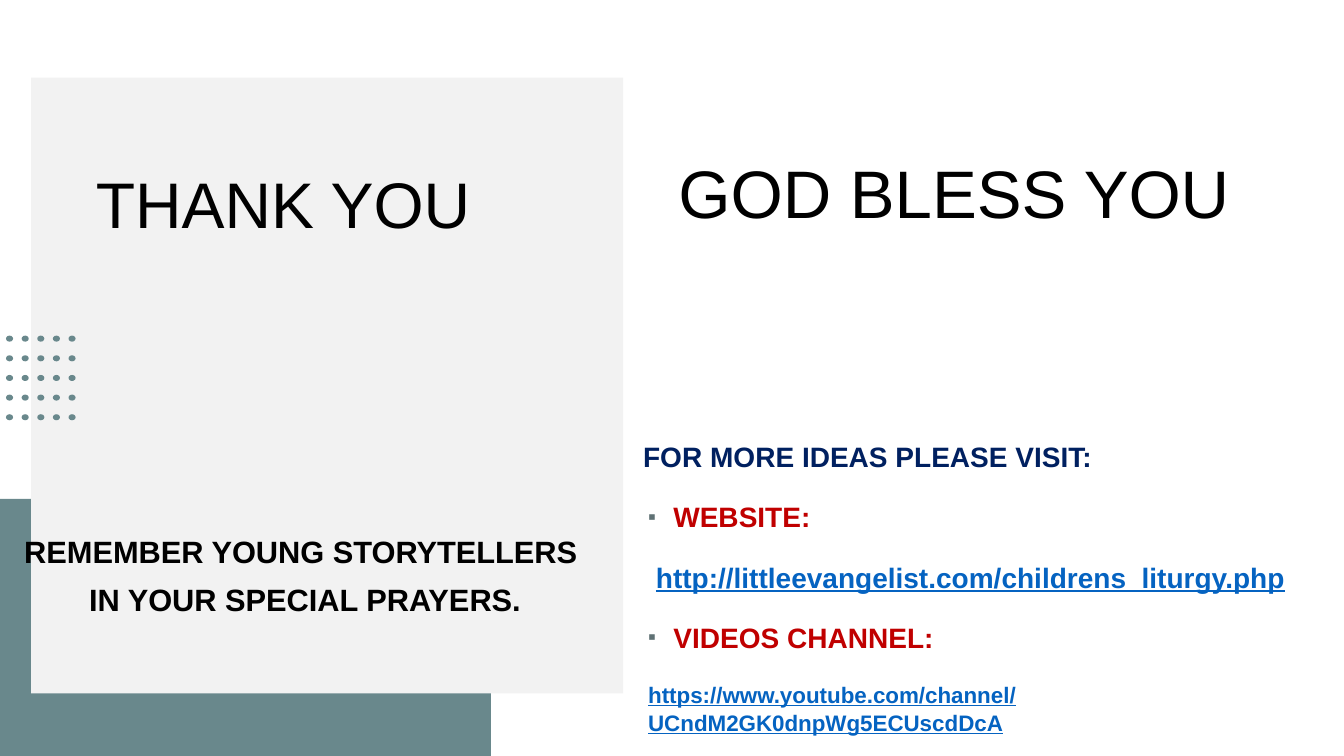
from dataclasses import dataclass
from itertools import product

from lxml.etree import SubElement
from pptx import Presentation
from pptx.dml.color import RGBColor
from pptx.enum.shapes import MSO_SHAPE as Preset
from pptx.enum.text import MSO_ANCHOR as Anchor, PP_ALIGN as Align
from pptx.oxml.ns import qn
from pptx.util import Inches, Pt

COLORS = {
    "teal": "69888C", "panel": "F2F2F2", "black": "000000", "navy": "002060",
    "red": "C00000", "link": "0563C1", "bullet": "5F7174",
}
FONT = "Arial"
DOTS_PER_SIDE = 5


@dataclass(frozen=True)
class Box:
    left: float
    top: float
    width: float
    height: float

    def lengths(self) -> tuple:
        return tuple(Inches(v) for v in (self.left, self.top, self.width, self.height))


@dataclass(frozen=True)
class Line:
    text: str
    color: str = "black"
    size: float = 20
    bold: bool = True
    underline: bool = False
    bullet: bool = False
    indent: float = 0
    lead: str = ""


def color(name: str) -> RGBColor:
    return RGBColor.from_string(COLORS[name])


def add_filled(shapes, preset, box: Box, fill: str):
    shape = shapes.add_shape(preset, *box.lengths())
    shape.shadow.inherit = False
    shape.fill.solid()
    shape.fill.fore_color.rgb = color(fill)
    shape.line.fill.background()
    return shape


def set_indent(paragraph, line: Line) -> None:
    properties = paragraph._p.get_or_add_pPr()
    properties.set("marL", str(Inches(line.indent)))
    properties.set("indent", str(Inches(-0.25 if line.bullet else 0)))
    if line.bullet:
        bullet_color = SubElement(properties, qn("a:buClr"))
        SubElement(bullet_color, qn("a:srgbClr"), val=COLORS["bullet"])
        SubElement(properties, qn("a:buSzPct"), val="80000")
        SubElement(properties, qn("a:buFont"), typeface=FONT)
        SubElement(properties, qn("a:buChar"), char="▪")


def add_run(paragraph, text: str, line: Line, underline: bool) -> None:
    run = paragraph.add_run()
    run.text = text
    run.font.name = FONT
    run.font.size = Pt(line.size)
    run.font.bold = line.bold
    run.font.underline = underline
    run.font.color.rgb = color(line.color)


def write_text(shape, lines: list[Line], *, align=Align.LEFT, anchor=Anchor.TOP,
               spacing: float = 0.9, before: float = 0) -> None:
    frame = shape.text_frame
    frame.word_wrap = True
    frame.vertical_anchor = anchor
    for index, line in enumerate(lines):
        paragraph = frame.add_paragraph() if index else frame.paragraphs[0]
        set_indent(paragraph, line)
        paragraph.alignment = align
        paragraph.line_spacing = spacing
        paragraph.space_before = Pt(before if index else 0)
        if line.lead:
            add_run(paragraph, line.lead, line, False)
        add_run(paragraph, line.text, line, line.underline)


def add_dots(slide) -> None:
    group = slide.shapes.add_group_shape()
    last = DOTS_PER_SIDE - 1
    for column, row in product(range(DOTS_PER_SIDE), repeat=2):
        dot = Box(0.06 + 0.62 * column / last, 3.33 + 0.78 * row / last, 0.07, 0.06)
        add_filled(group.shapes, Preset.OVAL, dot, "teal")


def main() -> None:
    presentation = Presentation()
    presentation.slide_width = Inches(13.33)
    presentation.slide_height = Inches(7.5)
    slide = presentation.slides.add_slide(presentation.slide_layouts[5])

    add_filled(slide.shapes, Preset.RECTANGLE, Box(0, 4.95, 4.87, 2.55), "teal")
    panel = add_filled(slide.shapes, Preset.RECTANGLE, Box(0.31, 0.77, 5.87, 6.11), "panel")

    title = slide.shapes.title
    panel._element.addnext(title._element)
    title.left, title.top, title.width, title.height = Box(0.85, 1.16, 4.59, 1.8).lengths()
    write_text(title, [Line("THANK YOU", size=46, bold=False)], anchor=Anchor.MIDDLE)
    add_dots(slide)

    prayer = slide.shapes.add_textbox(*Box(0.09, 5.28, 5.87, 0.95).lengths())
    write_text(prayer, [
        Line("REMEMBER YOUNG STORYTELLERS ", size=22),
        Line("IN YOUR SPECIAL PRAYERS.", size=22),
    ], align=Align.CENTER, before=10)

    blessing = slide.shapes.add_textbox(*Box(6.63, 1.58, 6.58, 0.95).lengths())
    write_text(blessing, [Line("GOD BLESS YOU", size=48, bold=False)], spacing=0.84)

    contacts = slide.shapes.add_textbox(*Box(6.28, 4.29, 7.05, 2.95).lengths())
    write_text(contacts, [
        Line("FOR MORE IDEAS PLEASE VISIT:", "navy"),
        Line("WEBSITE:", "red", bullet=True, indent=0.3),
        Line("http://littleevangelist.com/childrens_liturgy.php", "link",
             underline=True, indent=0.05, lead=" "),
        Line("VIDEOS CHANNEL:", "red", bullet=True, indent=0.3),
        Line("https://www.youtube.com/channel/UCndM2GK0dnpWg5ECUscdDcA", "link",
             size=16, underline=True, indent=0.05),
    ], spacing=1.05, before=18)

    presentation.save("out.pptx")


if __name__ == "__main__":
    main()
